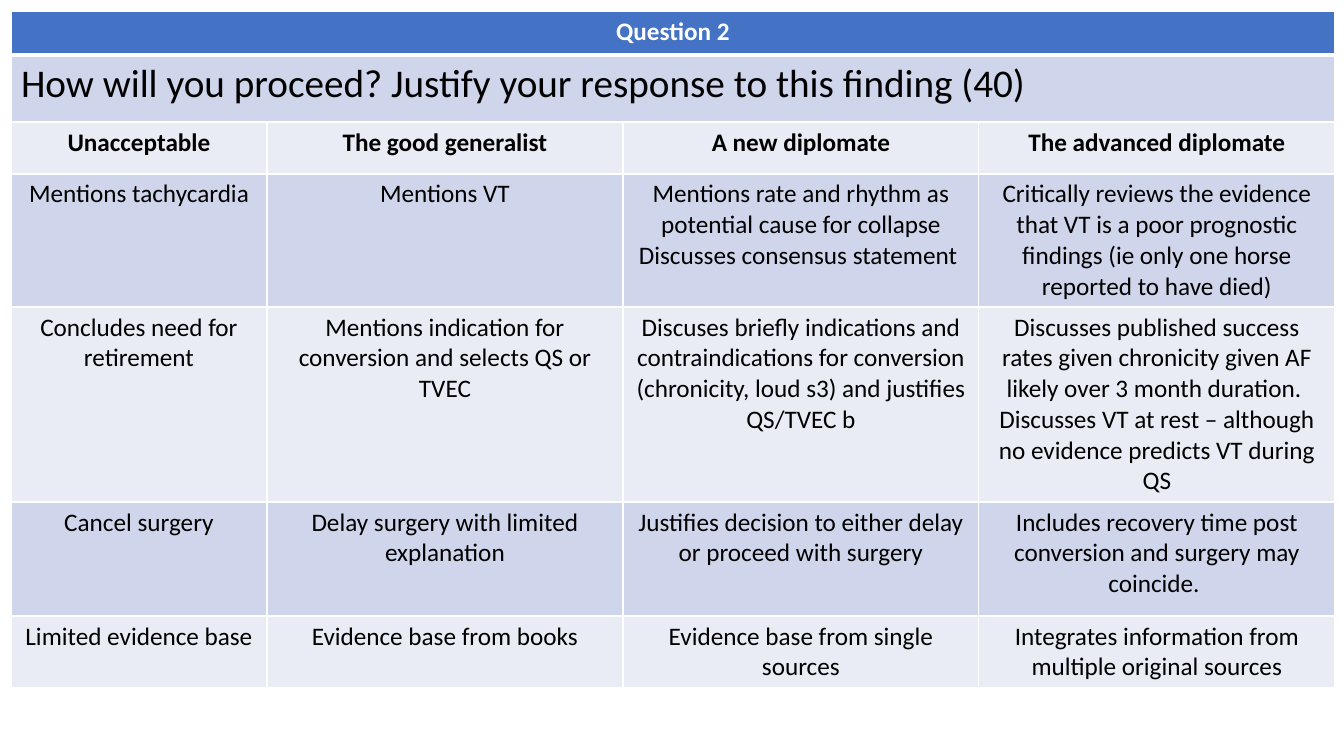
from lxml.etree import SubElement
from pptx import Presentation
from pptx.dml.color import RGBColor as RGB
from pptx.enum.text import PP_ALIGN as Align
from pptx.oxml.ns import qn
from pptx.util import Pt

# Content: each cell is a tuple of paragraphs
TITLE = "Question 2"
ASK = "How will you proceed? Justify your response to this finding (40)"
HEADS = ["Unacceptable", "The good generalist", "A new diplomate",
         "The advanced diplomate"]
MARKS = [
    [("Mentions tachycardia",),
     ("Mentions VT",),
     ("Mentions rate and rhythm as potential cause for collapse",
      "Discusses consensus statement "),
     ("Critically reviews the evidence that VT is a poor prognostic findings "
      "(ie only one horse reported to have died)",)],
    [("Concludes need for retirement",),
     ("Mentions indication for conversion and selects QS or TVEC",),
     ("Discuses briefly indications and contraindications for conversion "
      "(chronicity, loud s3) and justifies QS/TVEC b",),
     ("Discusses published success rates given chronicity given AF likely "
      "over 3 month duration. ",
      "Discusses VT at rest – although no evidence predicts VT during QS")],
    [("Cancel surgery",),
     ("Delay surgery with limited explanation",),
     ("Justifies decision to either delay or proceed with surgery",),
     ("Includes recovery time post conversion and surgery may coincide. ",)],
    [("Limited evidence base",),
     ("Evidence base from books",),
     ("Evidence base from single sources",),
     ("Integrates information from multiple original sources",)],
]


class Theme:
    font = "Calibri"
    body, large = 18, 28
    white, black = "FFFFFF", "000000"
    blue, dark, light = "4472C4", "CFD5EA", "E9EBF5"
    thin, thick = 1, 3


# Sizes in px
PX = 914400 / 100.8
WIDE, HIGH = 1344, 756
LEFT, TOP = 11, 11
COLS = [256, 356, 356, 356]
ROWS = [44, 67, 52, 133, 195, 114, 71]


def emu(px):
    return round(px * PX)


def edge(cell, top, base):
    """Draw the four white borders, ahead of the fill."""
    props = cell._tc.get_or_add_tcPr()
    widths = {"lnL": Theme.thin, "lnR": Theme.thin, "lnT": top, "lnB": base}
    for spot, (tag, width) in enumerate(widths.items()):
        line = SubElement(props, qn("a:" + tag), w=str(Pt(width)))
        fill = SubElement(line, qn("a:solidFill"))
        SubElement(fill, qn("a:srgbClr"), val=Theme.white)
        props.insert(spot, line)


def write(cell, paras, size=Theme.body, bold=False, ink=Theme.black,
          align=Align.CENTER):
    frame = cell.text_frame
    for i, text in enumerate(paras):
        para = frame.add_paragraph() if i else frame.paragraphs[0]
        para.alignment = align
        run = para.add_run()
        run.text = text
        font = run.font
        font.name, font.size, font.bold = Theme.font, Pt(size), bold
        font.color.rgb = RGB.from_string(ink)


def main():
    deck = Presentation()
    deck.slide_width, deck.slide_height = emu(WIDE), emu(HIGH)
    slide = deck.slides.add_slide(deck.slide_layouts[6])

    # Table grid
    grid = slide.shapes.add_table(
        len(ROWS), len(COLS), emu(LEFT), emu(TOP),
        emu(sum(COLS)), emu(sum(ROWS))).table
    for col, width in zip(grid.columns, COLS):
        col.width = emu(width)
    for row, height in zip(grid.rows, ROWS):
        row.height = emu(height)

    # Fills alternate below the title; a thick rule parts the two
    for r in range(len(ROWS)):
        shade = (Theme.dark if r % 2 else Theme.light) if r else Theme.blue
        top = Theme.thick if r == 1 else Theme.thin
        base = Theme.thick if r == 0 else Theme.thin
        for c in range(len(COLS)):
            cell = grid.cell(r, c)
            cell.fill.solid()
            cell.fill.fore_color.rgb = RGB.from_string(shade)
            edge(cell, top, base)

    # Title and question span the full width
    for r in (0, 1):
        grid.cell(r, 0).merge(grid.cell(r, len(COLS) - 1))
    write(grid.cell(0, 0), [TITLE], bold=True, ink=Theme.white)
    write(grid.cell(1, 0), [ASK], size=Theme.large, align=Align.LEFT)

    # Grade heads, then the marking rows
    for c, head in enumerate(HEADS):
        write(grid.cell(2, c), [head], bold=True)
    for r, marks in enumerate(MARKS, 3):
        for c, paras in enumerate(marks):
            write(grid.cell(r, c), paras)

    deck.save("out.pptx")


if __name__ == "__main__":
    main()
